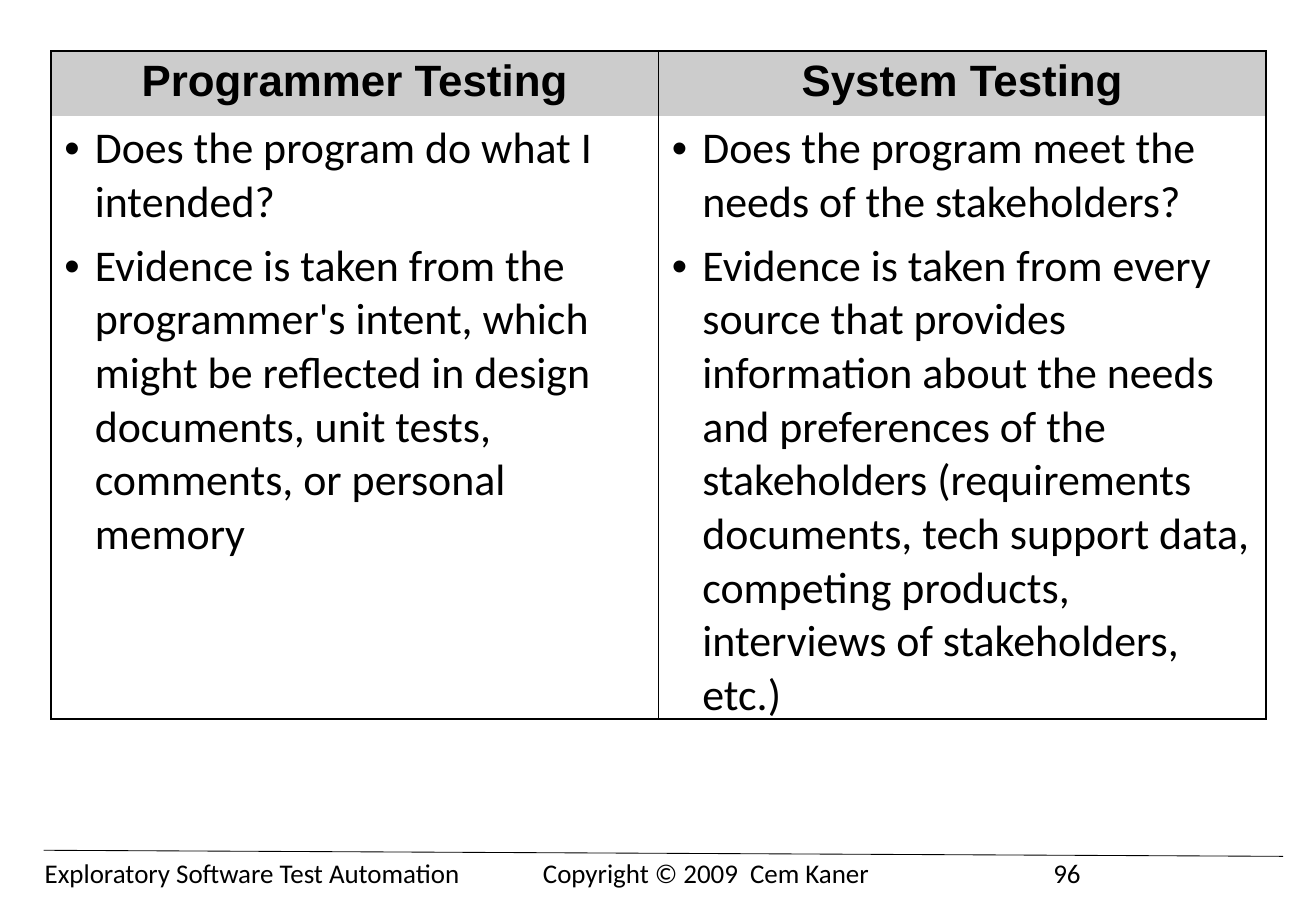
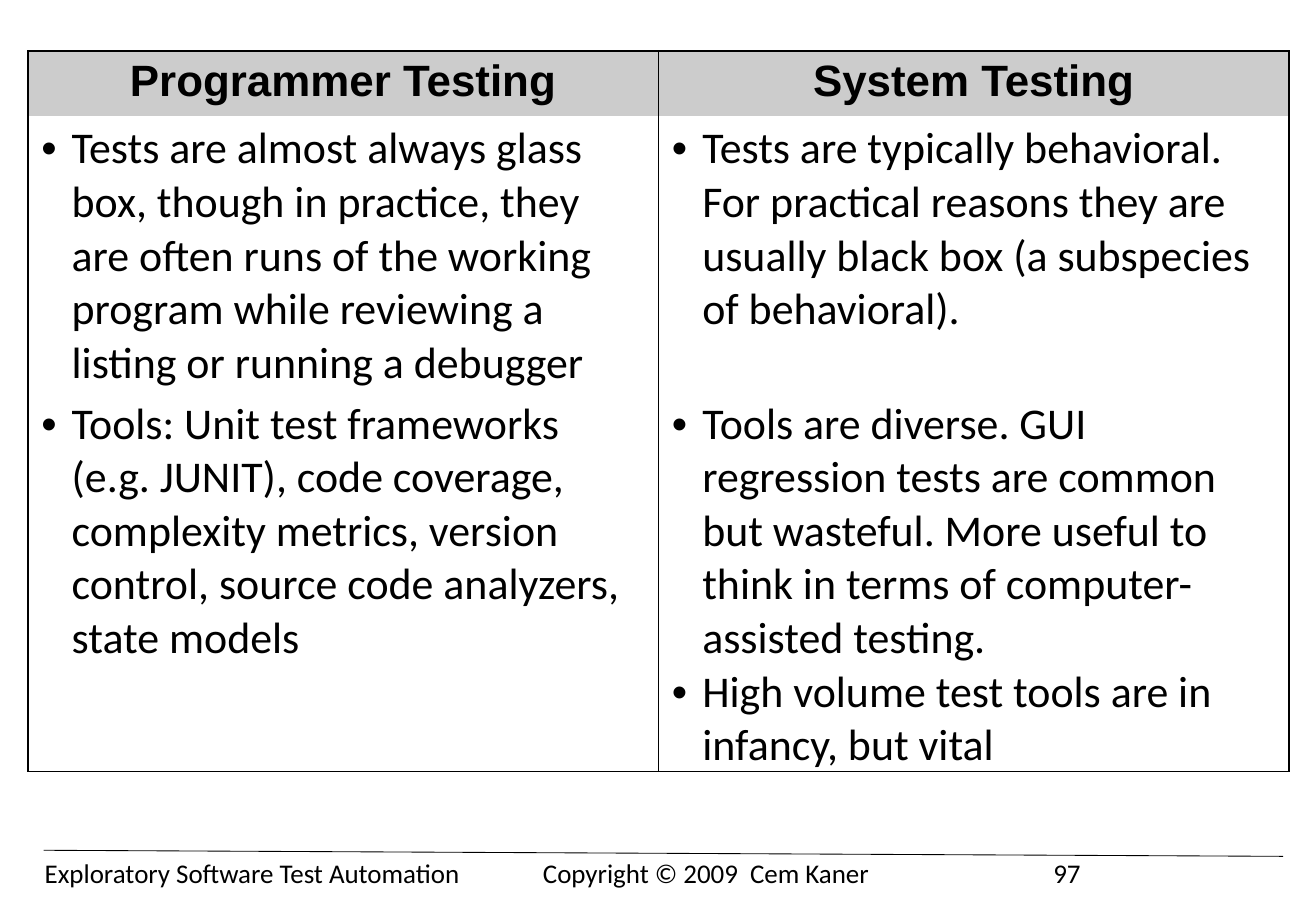
import pptx
import pptx.dml.color
import pptx.enum.shapes
import pptx.enum.text
import pptx.oxml.ns
import pptx.util
from lxml import etree

# 100 px to the inch
PX = 9144
PAGE_WIDTH, PAGE_HEIGHT = 1083, 750

BLACK = pptx.dml.color.RGBColor(0x00, 0x00, 0x00)
WHITE = pptx.dml.color.RGBColor(0xFF, 0xFF, 0xFF)
HEADER_GREY = pptx.dml.color.RGBColor(0xCC, 0xCC, 0xCC)

HEADER_FONT, BODY_FONT = "Arial", "Calibri"
HEADERS = ("Programmer Testing", "System Testing")
ROW_HEIGHT = 41
BULLET_INDENT = 25
FOOTER_BOX = (27, 700, 1024, 37)
FOOTER_RULE = (36, 700, 1056, 705)
FOOTER_STOPS = (410, 830)

# Each page: number, table box, and rows of cells; a cell is a tuple of bullets
PAGES = (
    (96, (42, 42, 1000, 550), (
        (("Does the program do what I intended?",),
         ("Does the program meet the needs of the stakeholders?",)),
        (("Evidence is taken from the programmer's intent, which might be "
          "reflected in design documents, unit tests, comments, or personal memory",),
         ("Evidence is taken from every source that provides information about "
          "the needs and preferences of the stakeholders (requirements documents, "
          "tech support data, competing products, interviews of stakeholders, etc.)",)),
    )),
    (97, (23, 42, 1038, 637), (
        (("Tests are almost always glass box, though in practice, they are often "
          "runs of the working program while reviewing a listing or running a debugger",),
         ("Tests are typically behavioral. For practical reasons they are usually "
          "black box (a subspecies of behavioral).",)),
        (("Tools: Unit test frameworks (e.g. JUNIT), code coverage, complexity "
          "metrics, version control, source code analyzers, state models",),
         ("Tools are diverse. GUI regression tests are common but wasteful. More "
          "useful to think in terms of computer-assisted testing.",
          "High volume test tools are in infancy, but vital")),
    )),
)


def px(length):
    return pptx.util.Emu(length * PX)


def add_child(parent, tag, **attributes):
    values = {name: str(value) for name, value in attributes.items()}
    return etree.SubElement(parent, pptx.oxml.ns.qn(tag), values)


def write_text(para, text, font=BODY_FONT, size=26, bold=False, color=BLACK,
               align=pptx.enum.text.PP_ALIGN.LEFT):
    para.alignment = align
    span = para.add_run()
    span.text = text
    span.font.name = font
    span.font.size = pptx.util.Pt(size)
    span.font.bold = bold
    span.font.color.rgb = color


def add_bullet(para):
    properties = para._p.get_or_add_pPr()
    properties.set("marL", str(px(BULLET_INDENT)))
    properties.set("indent", str(-px(BULLET_INDENT)))
    add_child(properties, "a:buFont", typeface="Arial")
    add_child(properties, "a:buChar", char="•")


def style_cell(cell, fill, edges):
    """Fill the cell and rule only the named edges (L, R, T, B)."""
    cell.margin_left = cell.margin_right = px(11)
    cell.margin_top = cell.margin_bottom = px(5)
    properties = cell._tc.get_or_add_tcPr()
    for edge in "LRTB":
        border = add_child(properties, "a:ln" + edge, w=pptx.util.Pt(1))
        if edge in edges:
            solid = add_child(border, "a:solidFill")
            add_child(solid, "a:srgbClr", val=BLACK)
        else:
            add_child(border, "a:noFill")
    cell.fill.solid()
    cell.fill.fore_color.rgb = fill


def add_comparison(page, box, rows):
    left, top, width, height = box
    frame = page.shapes.add_table(len(rows) + 1, len(HEADERS), px(left), px(top),
                                  px(width), px(height))
    table = frame.table
    table.first_row = table.horz_banding = False
    for row in table.rows:
        row.height = px(ROW_HEIGHT)
    frame.height = px(height)

    # Header row
    for column, header in enumerate(HEADERS):
        cell = table.cell(0, column)
        style_cell(cell, HEADER_GREY, "LRT")
        write_text(cell.text_frame.paragraphs[0], header, font=HEADER_FONT, bold=True,
                   align=pptx.enum.text.PP_ALIGN.CENTER)

    # Bulleted rows
    for number, row in enumerate(rows, start=1):
        for column, bullets in enumerate(row):
            cell = table.cell(number, column)
            style_cell(cell, WHITE, "LRB" if number == len(rows) else "LR")
            for position, bullet in enumerate(bullets):
                text_frame = cell.text_frame
                para = text_frame.add_paragraph() if position else text_frame.paragraphs[0]
                write_text(para, bullet)
                add_bullet(para)


def add_footer(page, box, number):
    # Title, copyright and page number on tab stops
    footer = page.shapes.add_textbox(*map(px, box))
    footer.text_frame.word_wrap = True
    para = footer.text_frame.paragraphs[0]
    write_text(para, f"Exploratory Software Test Automation\tCopyright © 2009  Cem Kaner\t{number}",
               size=16)
    stops = add_child(para._p.get_or_add_pPr(), "a:tabLst")
    for stop in FOOTER_STOPS:
        add_child(stops, "a:tab", pos=px(stop), algn="l")

    # Rule above the footer
    rule = page.shapes.add_connector(pptx.enum.shapes.MSO_CONNECTOR.STRAIGHT,
                                     *map(px, FOOTER_RULE))
    rule.line.color.rgb = BLACK
    rule.line.width = pptx.util.Pt(0.5)
    add_child(rule._element.spPr, "a:effectLst")


def main():
    deck = pptx.Presentation()
    deck.slide_width, deck.slide_height = px(PAGE_WIDTH), px(PAGE_HEIGHT)
    for number, box, rows in PAGES:
        page = deck.slides.add_slide(deck.slide_layouts[6])
        add_footer(page, FOOTER_BOX, number)
        add_comparison(page, box, rows)
    deck.save("out.pptx")


if __name__ == "__main__":
    main()
